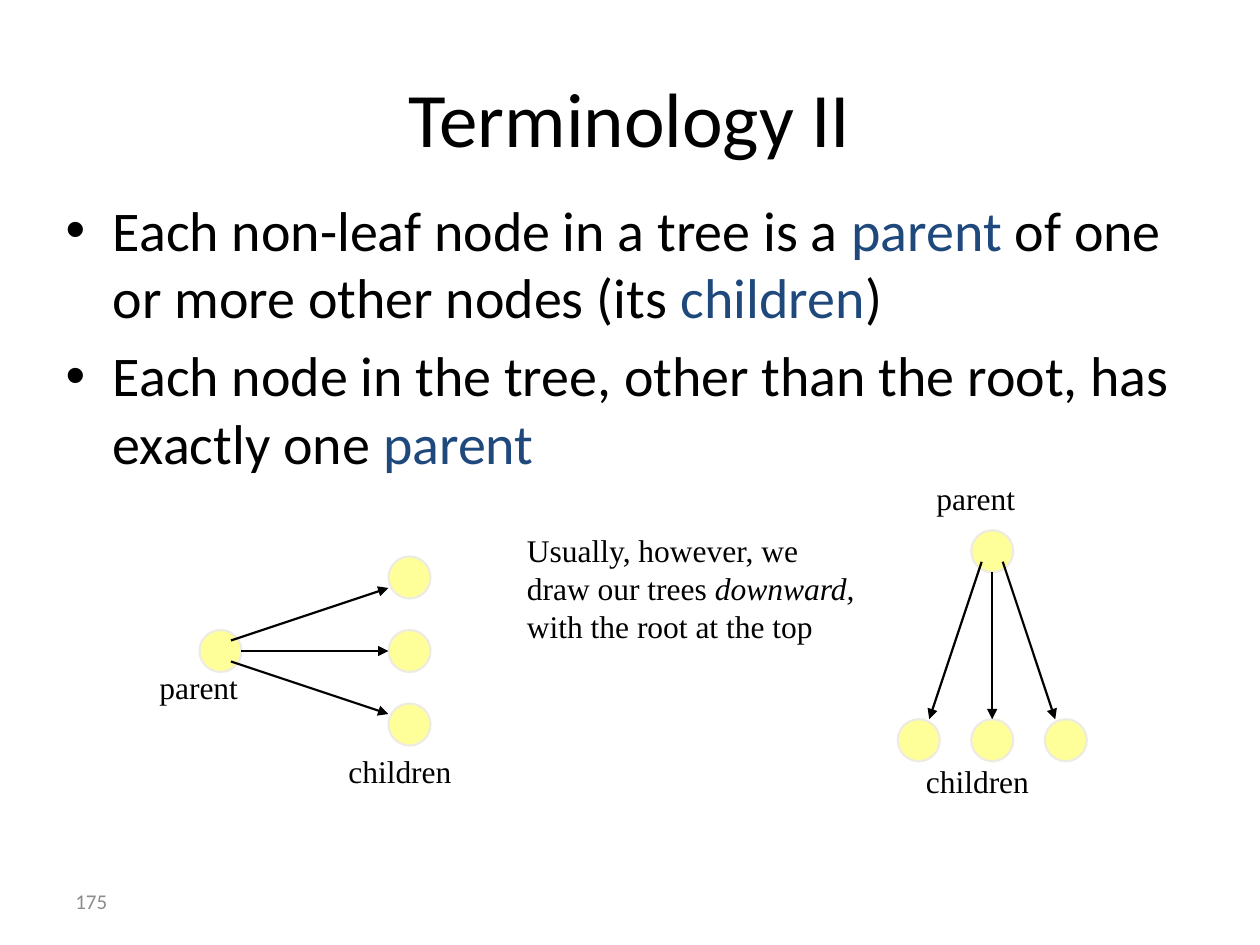
import pptx
import pptx.util
import pptx.dml.color
import pptx.enum.shapes
import pptx.enum.text
import pptx.oxml.ns
import lxml.etree

BLACK, ACCENT, GREY = "000000", "1F497D", "8C8C8C"
NODE_FILL, NODE_LINE = "FFFF99", "EEECE1"
SANS, SERIF = "Calibri", "Times New Roman"

# Content: each paragraph is a list of (text, run format)
HEADING = [[("Terminology II", {})]]
KEY = {"color": ACCENT}
DEFINITIONS = [
    [("Each non-leaf node in a tree is a ", {}), ("parent", KEY),
     (" of one or more other nodes (its ", {}), ("children", KEY), (")", {})],
    [("Each node in the tree, other than the root, has exactly one ", {}),
     ("parent", KEY)],
]
REMARK = [[("Usually, however, we draw our trees ", {}),
           ("downward,", {"italic": True}),
           (" with the root at the top", {})]]
PAGE = [[("175", {})]]

# Trees: root centre in grid cells, direction of growth, label boxes in cells
CELL = 1 / 12
TREES = [
    {"root": (21, 62), "down": False,
     "labels": [("parent", (14, 63, 15, 6)), ("children", (32, 71, 17, 6))]},
    {"root": (94.5, 52.5), "down": True,
     "labels": [("parent", (88, 45, 15, 6)), ("children", (87, 72, 17, 6))]},
]
RADIUS, DEPTH, SPREAD = 2, 18, 7


def inches(*values):
    return [pptx.util.Inches(v) for v in values]


def cells(*values):
    return inches(*(v * CELL for v in values))


def rgb(color):
    return pptx.dml.color.RGBColor.from_string(color)


def write(frame, paragraphs, font=SANS, size=18, color=BLACK,
          align=None, anchor=None):
    frame.word_wrap = True
    if anchor is not None:
        frame.vertical_anchor = anchor
    for number, runs in enumerate(paragraphs):
        paragraph = frame.paragraphs[0] if number == 0 else frame.add_paragraph()
        if align is not None:
            paragraph.alignment = align
        for text, style in runs:
            run = paragraph.add_run()
            run.text = text
            run.font.name = font
            run.font.size = pptx.util.Pt(size)
            run.font.italic = style.get("italic")
            run.font.color.rgb = rgb(style.get("color", color))


def place(holder, left, top, width, height):
    holder.left, holder.top, holder.width, holder.height = inches(
        left, top, width, height)


def add_node(shapes, x, y):
    node = shapes.add_shape(
        pptx.enum.shapes.MSO_SHAPE.OVAL,
        *cells(x - RADIUS, y - RADIUS, 2 * RADIUS, 2 * RADIUS))
    node.shadow.inherit = False
    node.fill.solid()
    node.fill.fore_color.rgb = rgb(NODE_FILL)
    node.line.color.rgb = rgb(NODE_LINE)
    node.line.width = pptx.util.Pt(1.25)


def add_arrow(shapes, start, end):
    arrow = shapes.add_connector(
        pptx.enum.shapes.MSO_CONNECTOR.STRAIGHT, *cells(*start, *end))
    arrow.line.color.rgb = rgb(BLACK)
    arrow.line.width = pptx.util.Pt(1.25)
    qn = pptx.oxml.ns.qn
    lxml.etree.SubElement(arrow.line._get_or_add_ln(), qn("a:tailEnd"),
                          type="triangle")
    lxml.etree.SubElement(arrow._element.spPr, qn("a:effectLst"))


def add_tree(slide, root, down, labels):
    shapes = slide.shapes.add_group_shape().shapes

    def point(along, across):
        dx, dy = (across, along) if down else (along, across)
        return root[0] + dx, root[1] + dy

    add_node(shapes, *root)
    for side in (-1, 0, 1):
        add_node(shapes, *point(DEPTH, side * SPREAD))
    # Outer arrows start inside the root and stop one cell short sideways
    for side in (0, -1, 1):
        start = point(1 if side else RADIUS, side)
        end = point(DEPTH - RADIUS, side * (SPREAD - 1))
        add_arrow(shapes, start, end)
    for text, box in labels:
        label = shapes.add_textbox(*cells(*box))
        write(label.text_frame, [[(text, {})]], font=SERIF)


def main():
    deck = pptx.Presentation()
    deck.slide_width, deck.slide_height = inches(10, 7.5)
    slide = deck.slides.add_slide(deck.slide_layouts[1])
    middle = pptx.enum.text.MSO_ANCHOR.MIDDLE

    # Title and definitions
    heading, definitions = slide.placeholders
    place(heading, 0.5, 0.3, 9, 1.25)
    write(heading.text_frame, HEADING, size=44, anchor=middle,
          align=pptx.enum.text.PP_ALIGN.CENTER)
    place(definitions, 0.42, 1.5, 9.38, 2.43)
    write(definitions.text_frame, DEFINITIONS, size=32)

    # Sideways and downward trees
    for tree in TREES:
        add_tree(slide, **tree)

    # Remark between the trees, page number
    remark = slide.shapes.add_textbox(*cells(49, 50, 34, 20))
    write(remark.text_frame, REMARK, font=SERIF)
    page = slide.shapes.add_textbox(*inches(0.5, 6.95, 2.33, 0.4))
    write(page.text_frame, PAGE, size=12, color=GREY, anchor=middle)

    deck.save("out.pptx")


if __name__ == "__main__":
    main()
